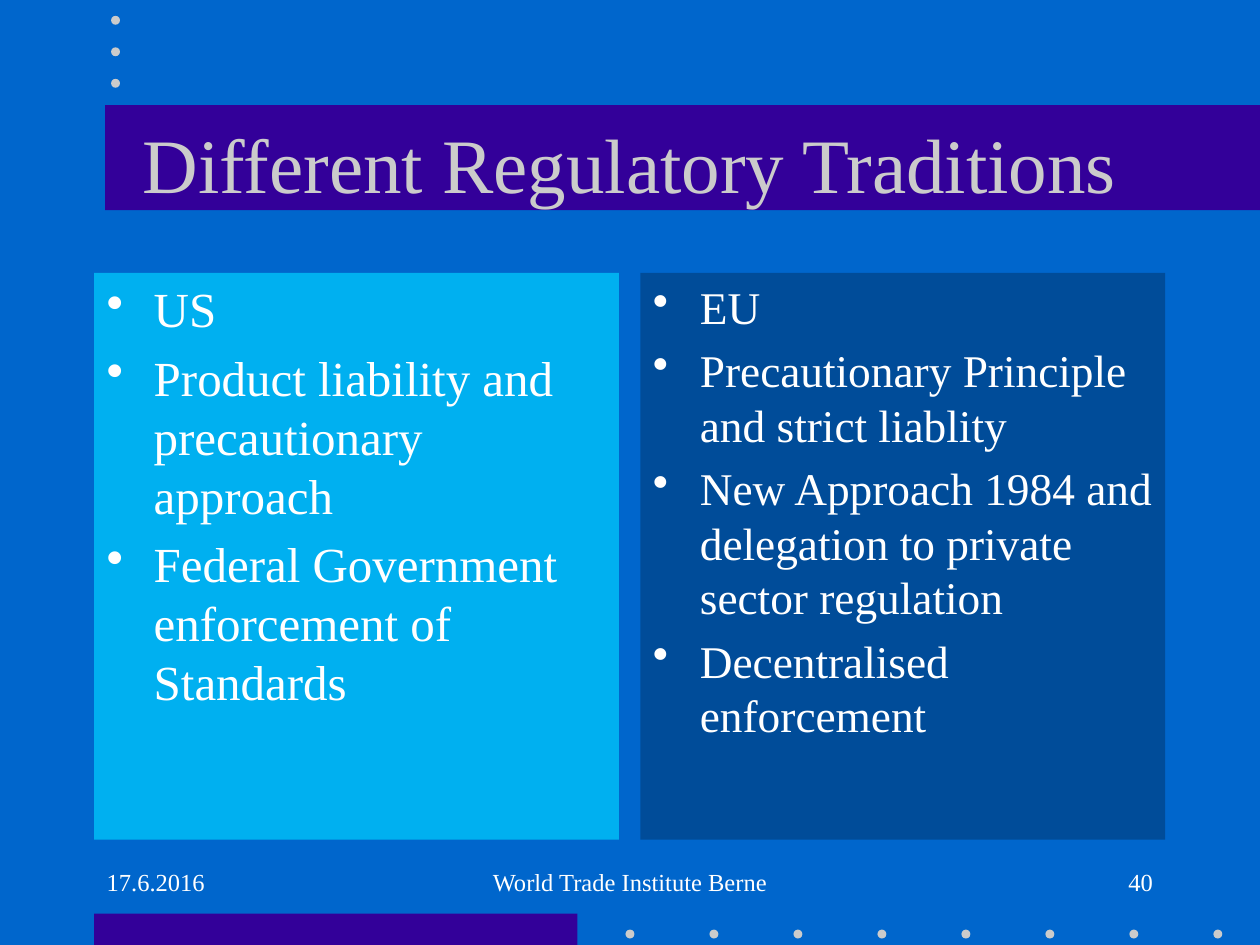
import pptx
import pptx.util
import pptx.dml.color
import pptx.enum.shapes
import pptx.enum.text
import pptx.oxml

Cm = pptx.util.Cm
Pt = pptx.util.Pt
RGBColor = pptx.dml.color.RGBColor
PP_ALIGN = pptx.enum.text.PP_ALIGN
MSO_ANCHOR = pptx.enum.text.MSO_ANCHOR
MSO_SHAPE = pptx.enum.shapes.MSO_SHAPE

BLUE = RGBColor(0x00, 0x66, 0xCC)
PURPLE = RGBColor(0x33, 0x00, 0x99)
GREY = RGBColor(0xCB, 0xCB, 0xCB)
SKY = RGBColor(0x00, 0xB0, 0xF0)
NAVY = RGBColor(0x00, 0x4C, 0x99)
WHITE = RGBColor(0xFF, 0xFF, 0xFF)


def write(tf, texts, size=14, color=WHITE, font="Times New Roman",
          align=PP_ALIGN.LEFT, before=0, bullet=False):
    for i, text in enumerate(texts):
        p = tf.paragraphs[0] if i == 0 else tf.add_paragraph()
        p.alignment = align
        p.space_before = Pt(before)
        r = p.add_run()
        r.text = text
        r.font.name = font
        r.font.size = Pt(size)
        r.font.color.rgb = color
        if bullet:
            pPr = p._p.get_or_add_pPr()
            pPr.set("marL", str(Cm(0.95)))
            pPr.set("indent", str(-Cm(0.95)))
            bu = pptx.oxml.parse_xml(
                '<a:buChar xmlns:a="http://schemas.openxmlformats.org/'
                'drawingml/2006/main" char="•"/>')
            pPr.append(bu)


class Deck:
    """Builds the slide's bars, dots, panels and labels in one style."""

    def __init__(self, prs):
        self.s = prs.slides.add_slide(prs.slide_layouts[6])
        self.s.background.fill.solid()
        self.s.background.fill.fore_color.rgb = BLUE

    def shape(self, kind, x, y, w, h, fill):
        sp = self.s.shapes.add_shape(kind, Cm(x), Cm(y), Cm(w), Cm(h))
        sp.shadow.inherit = False
        sp.fill.solid()
        sp.fill.fore_color.rgb = fill
        sp.line.fill.background()
        return sp

    def bar(self, x, y, w, h):
        self.shape(MSO_SHAPE.RECTANGLE, x, y, w, h, PURPLE)

    def dot(self, x, y):
        self.shape(MSO_SHAPE.OVAL, x, y, 0.18, 0.18, GREY)

    def panel(self, x, fill, texts, size):
        sp = self.shape(MSO_SHAPE.RECTANGLE, x, 5.5, 10.58, 11.43, fill)
        tf = sp.text_frame
        tf.word_wrap = True
        tf.vertical_anchor = MSO_ANCHOR.TOP
        write(tf, texts, size=size, before=size * 0.2, bullet=True)

    def label(self, x, y, w, h, text, anchor=MSO_ANCHOR.TOP, **style):
        sp = self.s.shapes.add_textbox(Cm(x), Cm(y), Cm(w), Cm(h))
        tf = sp.text_frame
        tf.word_wrap = True
        tf.vertical_anchor = anchor
        write(tf, [text], **style)


def main():
    prs = pptx.Presentation()
    prs.slide_width, prs.slide_height = Cm(25.4), Cm(19.05)
    deck = Deck(prs)

    deck.bar(1.9, 18.42, 9.74, 0.63)
    for i in range(8):
        deck.dot(12.61 + i * 1.693, 18.74)
    deck.bar(2.12, 2.12, 23.28, 2.12)
    for i in range(3):
        deck.dot(2.24, 0.32 + i * 0.635)

    deck.label(1.9, 1.7, 21.6, 3.18, "Different Regulatory Traditions",
               anchor=MSO_ANCHOR.MIDDLE, size=44, color=GREY,
               align=PP_ALIGN.CENTER)
    deck.panel(1.9, SKY, [
        "US",
        "Product liability and precautionary approach",
        "Federal Government enforcement of Standards",
    ], 28)
    deck.panel(12.91, NAVY, [
        "EU",
        "Precautionary Principle and strict liablity",
        "New Approach 1984 and delegation to private sector regulation",
        "Decentralised enforcement",
    ], 25.9)

    deck.label(1.9, 17.36, 5.29, 1.27, "17.6.2016", before=7)
    deck.label(8.68, 17.36, 8.04, 1.27, "World Trade Institute Berne",
               align=PP_ALIGN.CENTER, before=7)
    deck.label(18.2, 17.36, 5.29, 1.27, "40", align=PP_ALIGN.RIGHT, before=7)
    prs.save("out.pptx")


if __name__ == "__main__":
    main()
